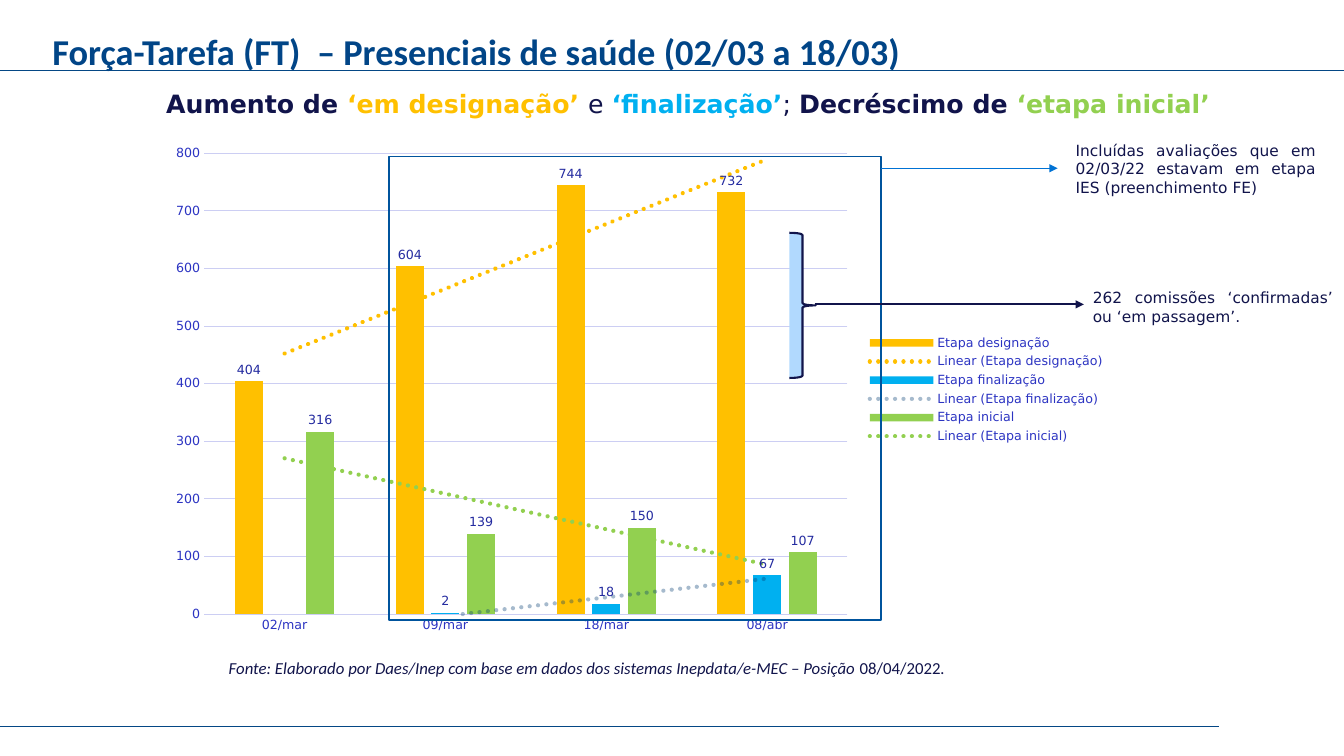
from lxml.etree import SubElement
from pptx import Presentation
from pptx.chart.data import CategoryChartData
from pptx.dml.color import RGBColor
from pptx.enum.chart import XL_CHART_TYPE, XL_LABEL_POSITION, XL_LEGEND_POSITION, XL_TICK_MARK
from pptx.enum.shapes import MSO_CONNECTOR, MSO_SHAPE
from pptx.enum.text import PP_ALIGN
from pptx.oxml import parse_xml
from pptx.oxml.ns import nsdecls, qn
from pptx.util import Inches, Pt

# Content
NAVY, BLUE, GRID, AXIS = "11144B", "044785", "CCCEF3", "2C34C2"
YELLOW, CYAN, GREEN = "FFC000", "00B0F0", "92D050"
SANS, CALIBRI = "DejaVu Sans", "Calibri"

DATES = ["02/mar", "09/mar", "18/mar", "08/abr"]
# name, values, bar colour, trend colour, trend opacity in percent
SERIES = [
    ("Etapa designação", (404, 604, 744, 732), YELLOW, YELLOW, 100),
    ("Etapa finalização", (None, 2, 18, 67), CYAN, "023C71", 34),
    ("Etapa inicial", (316, 139, 150, 107), GREEN, GREEN, 100),
]
CHART_BOX = (1.55, 1.35, 9.51, 5.03)
PLOT_LAYOUT = {"x": 0.05, "y": 0.034, "w": 0.671, "h": 0.909}

# box, font, size, alignment, runs of (text, colour, bold, italic)
TEXTS = [
    ((0.42, 0.29, 8.99, 0.39), CALIBRI, 26, PP_ALIGN.LEFT,
     [("Força-Tarefa (FT)  – Presenciais de saúde (02/03 a 18/03)", "014587", True, False)]),
    ((1.55, 0.83, 11.01, 0.4), SANS, 18, PP_ALIGN.LEFT,
     [("Aumento de ", NAVY, True, False), ("‘em designação’ ", YELLOW, True, False),
      ("e ", NAVY, False, False), ("‘finalização’", CYAN, True, False),
      ("; ", NAVY, False, False), ("Decréscimo de", NAVY, True, False),
      (" ‘etapa inicial’", GREEN, True, False)]),
    ((10.57, 1.35, 2.58, 0.66), SANS, 11, PP_ALIGN.JUSTIFY,
     [("Incluídas avaliações que em 02/03/22 estavam em etapa IES (preenchimento FE)",
       NAVY, False, False)]),
    ((10.74, 2.81, 2.58, 0.47), SANS, 11, PP_ALIGN.JUSTIFY,
     [("262 comissões ‘confirmadas’ ou ‘em passagem’.", NAVY, False, False)]),
    ((2.17, 6.48, 9.06, 0.3), CALIBRI, 12, PP_ALIGN.LEFT,
     [("Fonte: Elaborado por Daes/Inep com base em dados dos sistemas Inepdata/e-MEC – Posição ",
       NAVY, False, True), ("08/04/2022", NAVY, False, False), (".", NAVY, False, True)]),
]
# start x, end x, y, colour, width, arrowhead
RULES = [(0, 12.09, 7.21, BLUE, 0.5, False), (0, 13.44, 0.7, BLUE, 0.5, False)]
ARROWS = [(8.74, 10.49, 1.67, "0072D4", 0.5, True), (8.08, 10.75, 3.02, NAVY, 1.5, True)]
# preset, box, fill, line colour, line width
BRACE = (MSO_SHAPE.RIGHT_BRACE, (7.83, 2.31, 0.26, 1.44), "B1D9FE", NAVY, 1.5)
FRAME = (MSO_SHAPE.RECTANGLE, (3.86, 1.55, 4.88, 4.6), None, "00549D", 1)


# Helpers
def color(value):
    return RGBColor.from_string(value)


def inches(box):
    return [Inches(length) for length in box]


def set_font(font, name, size, value):
    font.name, font.size = name, Pt(size)
    font.color.rgb = color(value)


def set_line(line, value, width):
    line.color.rgb = color(value)
    line.width = Pt(width)


def add_line(slide, start, end, y, value, width, arrow):
    connector = slide.shapes.add_connector(
        MSO_CONNECTOR.STRAIGHT, *inches((start, y, end, y)))
    set_line(connector.line, value, width)
    if arrow:
        SubElement(connector.line._get_or_add_ln(), qn("a:tailEnd"), type="triangle")
    SubElement(connector._element.spPr, qn("a:effectLst"))


def add_outline(slide, preset, box, fill, value, width):
    shape = slide.shapes.add_shape(preset, *inches(box))
    shape.shadow.inherit = False
    if fill:
        shape.fill.solid()
        shape.fill.fore_color.rgb = color(fill)
    else:
        shape.fill.background()
    set_line(shape.line, value, width)


def add_text(slide, box, name, size, alignment, runs):
    frame = slide.shapes.add_textbox(*inches(box)).text_frame
    frame.word_wrap = True
    paragraph = frame.paragraphs[0]
    paragraph.alignment = alignment
    if size == 26:
        paragraph.line_spacing = 0.9
    paragraph.font.name, paragraph.font.size = name, Pt(size)
    for text, value, bold, italic in runs:
        run = paragraph.add_run()
        run.text = text
        run.font.color.rgb = color(value)
        run.font.bold, run.font.italic = bold, italic


def add_trend(series, value, opacity):
    trend = parse_xml(
        f'<c:trendline {nsdecls("c", "a")}><c:spPr><a:ln w="{Pt(3)}" cap="rnd"><a:solidFill>'
        f'<a:srgbClr val="{value}"><a:alpha val="{opacity * 1000}"/></a:srgbClr></a:solidFill>'
        '<a:prstDash val="sysDot"/></a:ln></c:spPr><c:trendlineType val="linear"/>'
        '<c:dispRSqr val="0"/><c:dispEq val="0"/></c:trendline>')
    series._element.find(qn("c:cat")).addprevious(trend)


def set_plot_layout(chart):
    plot_area = chart._chartSpace.chart.plotArea
    for old in plot_area.findall(qn("c:layout")):
        plot_area.remove(old)
    parts = "".join(f'<c:{key}Mode val="edge"/>' for key in "xy")
    parts += "".join(f'<c:{key} val="{value}"/>' for key, value in PLOT_LAYOUT.items())
    plot_area.insert(0, parse_xml(
        f'<c:layout {nsdecls("c")}><c:manualLayout><c:layoutTarget val="inner"/>'
        f'{parts}</c:manualLayout></c:layout>'))


def add_stage_chart(slide):
    data = CategoryChartData()
    data.categories = DATES
    for name, values, *_ in SERIES:
        data.add_series(name, values)
    chart = slide.shapes.add_chart(
        XL_CHART_TYPE.COLUMN_CLUSTERED, *inches(CHART_BOX), data).chart
    chart.has_title = False
    set_font(chart.font, SANS, 10, NAVY)
    chart.has_legend = True
    chart.legend.position = XL_LEGEND_POSITION.RIGHT
    chart.legend.include_in_layout = False
    set_font(chart.legend.font, SANS, 9, AXIS)
    set_plot_layout(chart)

    # Axes
    for axis in (chart.category_axis, chart.value_axis):
        axis.major_tick_mark = axis.minor_tick_mark = XL_TICK_MARK.NONE
        set_font(axis.tick_labels.font, SANS, 9, AXIS)
    set_line(chart.category_axis.format.line, GRID, 0.75)
    values_axis = chart.value_axis
    values_axis.minimum_scale, values_axis.maximum_scale = 0, 800
    values_axis.major_unit = 100
    values_axis.format.line.fill.background()
    set_line(values_axis.major_gridlines.format.line, GRID, 0.75)

    # Columns, labels and trends
    plot = chart.plots[0]
    plot.gap_width, plot.overlap, plot.vary_by_categories = 219, -27, False
    for series, (_, _, fill, trend, opacity) in zip(plot.series, SERIES):
        series.format.fill.solid()
        series.format.fill.fore_color.rgb = color(fill)
        labels = series.data_labels
        labels.show_value = True
        labels.position = XL_LABEL_POSITION.OUTSIDE_END
        set_font(labels.font, SANS, 9, "242BA0")
        add_trend(series, trend, opacity)


def main():
    presentation = Presentation()
    presentation.slide_width, presentation.slide_height = Inches(13.33), Inches(7.5)
    slide = presentation.slides.add_slide(presentation.slide_layouts[6])
    for rule in RULES:
        add_line(slide, *rule)
    add_stage_chart(slide)
    for outline in (BRACE, FRAME):
        add_outline(slide, *outline)
    for text in TEXTS:
        add_text(slide, *text)
    for arrow in ARROWS:
        add_line(slide, *arrow)
    presentation.save("out.pptx")


if __name__ == "__main__":
    main()
